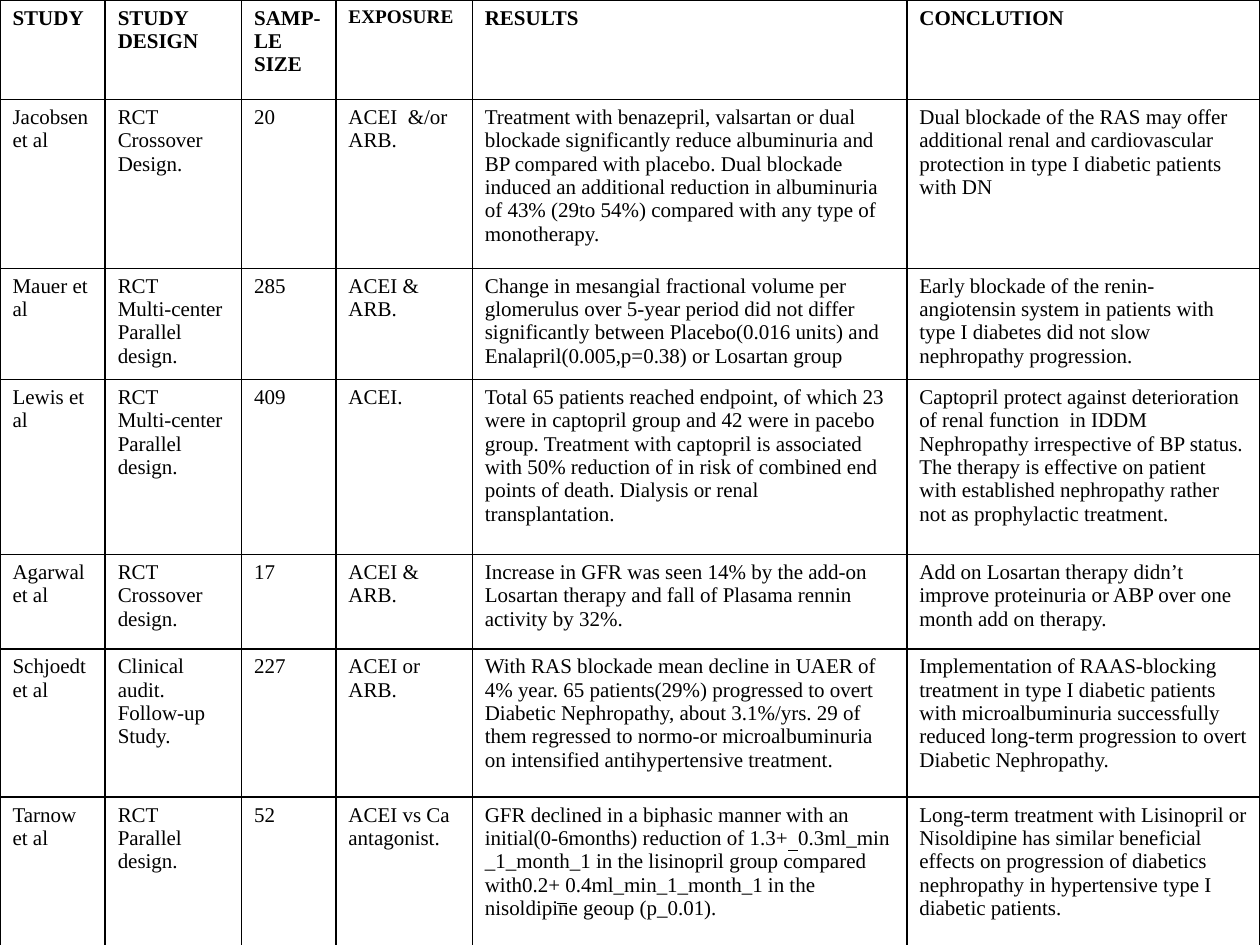
import pptx
import pptx.dml.color
import pptx.enum.shapes
import pptx.oxml.ns
import pptx.util
from lxml import etree

Cm = pptx.util.Cm
Pt = pptx.util.Pt
qn = pptx.oxml.ns.qn

BLACK = pptx.dml.color.RGBColor(0, 0, 0)
FONT = "Times New Roman"

HEADS = ["STUDY", "STUDY DESIGN", "SAMP-LE SIZE", "EXPOSURE", "RESULTS", "CONCLUTION"]

# A line break starts a new paragraph.
STUDIES = [
    ("Jacobsen et al", "RCT\nCrossover\nDesign.", "20", "ACEI  &/or ARB.",
     "Treatment with benazepril, valsartan or dual blockade significantly reduce "
     "albuminuria and BP compared with placebo. Dual blockade induced an additional "
     "reduction in albuminuria of 43% (29to 54%) compared with any type of monotherapy.",
     "Dual blockade of the RAS may offer additional renal and cardiovascular "
     "protection in type I diabetic patients with DN"),
    ("Mauer et al", "RCT\nMulti-center\nParallel design.", "285", "ACEI & ARB.",
     "Change in mesangial fractional volume per glomerulus over 5-year period did not "
     "differ significantly between Placebo(0.016 units) and Enalapril(0.005,p=0.38) "
     "or Losartan group",
     "Early blockade of the renin-angiotensin system in patients with type I diabetes "
     "did not slow nephropathy progression."),
    ("Lewis et al", "RCT\nMulti-center\nParallel design.", "409", "ACEI.",
     "Total 65 patients reached endpoint, of which 23 were in captopril group and 42 "
     "were in pacebo group. Treatment with captopril is associated with 50% reduction "
     "of in risk of combined end points of death. Dialysis or renal transplantation.",
     "Captopril protect against deterioration of renal function  in IDDM\n"
     "Nephropathy irrespective of BP status. The therapy is effective on patient with "
     "established nephropathy rather not as prophylactic treatment."),
    ("Agarwal et al", "RCT\nCrossover design.", "17", "ACEI & ARB.",
     "Increase in GFR was seen 14% by the add-on Losartan therapy and fall of Plasama "
     "rennin activity by 32%.",
     "Add on Losartan therapy didn’t improve proteinuria or ABP over one month add on "
     "therapy."),
    ("Schjoedt et al", "Clinical audit.\nFollow-up\nStudy.", "227", "ACEI or ARB.",
     "With RAS blockade mean decline in UAER of 4% year. 65 patients(29%) progressed "
     "to overt Diabetic Nephropathy, about 3.1%/yrs. 29 of them regressed to normo-or "
     "microalbuminuria on intensified antihypertensive treatment.",
     "Implementation of RAAS-blocking treatment in type I diabetic patients with "
     "microalbuminuria successfully reduced long-term progression to overt Diabetic "
     "Nephropathy."),
    ("Tarnow et al", "RCT\nParallel design.", "52", "ACEI vs Ca antagonist.",
     "GFR declined in a biphasic manner with an initial(0-6months) reduction of "
     "1.3+  0.3ml_min _1_month_1 in the lisinopril group compared with0.2+ "
     "0.4ml_min_1_month_1 in the nisoldipine geoup (p_0.01).",
     "Long-term treatment with Lisinopril or Nisoldipine has similar beneficial "
     "effects on progression of diabetics nephropathy in hypertensive type I diabetic "
     "patients."),
]

WIDTHS = [2.12, 2.75, 1.9, 2.75, 8.76, 7.12]
HEIGHTS = [2.01, 3.4, 2.24, 3.53, 1.9, 2.99, 2.99]

# Strokes that turn a plus into a plus-minus sign: start x, end x, y
STROKES = [(16.08, 15.88, 17.15), (11.23, 11.43, 18.21)]


def write(frame, text, size=12, bold=False):
    frame.text = text
    for para in frame.paragraphs:
        for run in para.runs:
            font = run.font
            font.name = FONT
            font.size = Pt(size)
            font.bold = bold
            font.color.rgb = BLACK


def frame_cell(cell, width=1):
    """Draw a line on all four sides of a cell and leave it unfilled."""
    cell.fill.background()
    props = cell._tc.get_or_add_tcPr()
    for i, side in enumerate(("lnL", "lnR", "lnT", "lnB")):
        line = etree.Element(qn("a:" + side), w=str(Pt(width)))
        fill = etree.SubElement(line, qn("a:solidFill"))
        etree.SubElement(fill, qn("a:srgbClr"), val=str(BLACK))
        props.insert(i, line)


def add_table(slide):
    rows = [HEADS] + STUDIES
    table = slide.shapes.add_table(
        len(rows), len(HEADS), 0, 0, Cm(sum(WIDTHS)), Cm(sum(HEIGHTS))).table
    table.first_row = table.horz_banding = False
    for col, width in zip(table.columns, WIDTHS):
        col.width = Cm(width)
    for row, height in zip(table.rows, HEIGHTS):
        row.height = Cm(height)
    for r, texts in enumerate(rows):
        for c, text in enumerate(texts):
            cell = table.cell(r, c)
            write(cell.text_frame, text, bold=r == 0,
                  size=11 if text == "EXPOSURE" else 12)
            frame_cell(cell)


def add_stroke(slide, start, end, y):
    line = slide.shapes.add_connector(
        pptx.enum.shapes.MSO_CONNECTOR.STRAIGHT, Cm(start), Cm(y), Cm(end), Cm(y))
    line.line.color.rgb = BLACK
    line.line.width = Pt(0.75)
    etree.SubElement(line._element.spPr, qn("a:effectLst"))


def main():
    deck = pptx.Presentation()
    deck.slide_width = Cm(25.4)
    deck.slide_height = Cm(19.05)
    slide = deck.slides.add_slide(deck.slide_layouts[6])
    add_table(slide)
    for stroke in STROKES:
        add_stroke(slide, *stroke)
    deck.save("out.pptx")


if __name__ == "__main__":
    main()
